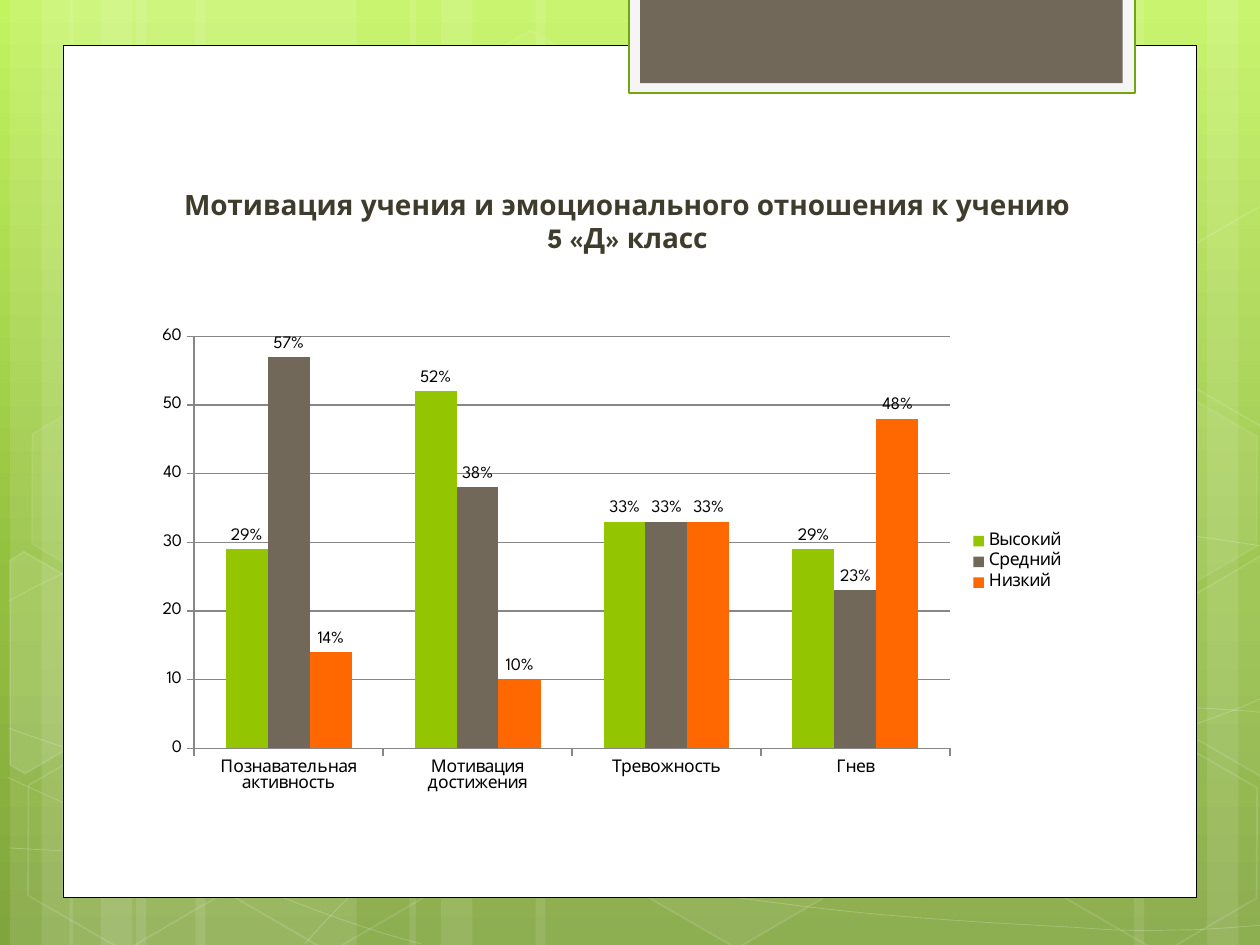
from copy import deepcopy

from lxml.etree import SubElement
from pptx import Presentation
from pptx.chart.data import CategoryChartData
from pptx.dml.color import RGBColor
from pptx.enum.chart import XL_CHART_TYPE as ChartType
from pptx.enum.chart import XL_LABEL_POSITION as LabelPosition
from pptx.enum.chart import XL_LEGEND_POSITION as LegendPosition
from pptx.enum.chart import XL_TICK_MARK as TickMark
from pptx.enum.shapes import MSO_SHAPE as Preset
from pptx.enum.text import MSO_ANCHOR as Anchor
from pptx.enum.text import MSO_AUTO_SIZE as AutoSize
from pptx.enum.text import PP_ALIGN as Align
from pptx.oxml.ns import qn
from pptx.util import Inches, Pt

FONT = "League Spartan"
WHITE = RGBColor(0xFF, 0xFF, 0xFF)
BLACK = RGBColor(0x00, 0x00, 0x00)
PALE = RGBColor(0xF5, 0xF5, 0xF5)
GREEN = RGBColor(0x94, 0xC6, 0x00)
DARK_GREEN = RGBColor(0x74, 0xA5, 0x10)
BROWN = RGBColor(0x71, 0x68, 0x5A)
ORANGE = RGBColor(0xFF, 0x67, 0x00)
TITLE_COLOR = RGBColor(0x3E, 0x3D, 0x2D)
GRID_COLOR = RGBColor(0x87, 0x87, 0x87)
BACKGROUND = [(0, RGBColor(0xC3, 0xF3, 0x5F)),
              (0.62, RGBColor(0x93, 0xBF, 0x3F)),
              (1, RGBColor(0x81, 0xA5, 0x3E))]

# Left edge and width of each full-height stripe
STRIPES = [(1.08, 1.75), (0.08, 0.5), (0.33, 0.83), (1.55, 1.75), (0.55, 0.5),
           (0.8, 0.83), (7.33, 1.75), (9.58, 0.5), (9, 0.83), (4.25, 3.08),
           (3.25, 0.5), (3.5, 0.83)]
# Each curve: start point, then Bezier segments of three points
CURVES = [
    [(0.07, 6.73), (0.61, 6.76), (1.15, 6.79), (1.9, 6.78), (2.65, 6.77),
     (3.58, 6.75), (4.58, 6.65), (5.58, 6.55), (7, 6.36), (7.92, 6.17),
     (8.83, 5.98), (9.77, 5.68), (10.07, 5.51)],
    [(0.07, 4.77), (0.36, 4.61), (0.65, 4.46), (1.21, 4.31), (1.78, 4.16),
     (2.59, 3.94), (3.47, 3.87), (4.36, 3.8), (5.44, 3.79), (6.54, 3.87),
     (7.64, 3.95), (9.47, 4.26), (10.07, 4.34)],
    [(0.06, 6.17), (1.27, 6.72), (2.47, 7.27), (3.34, 7.49)],
    [(0.07, 5.78), (0.38, 5.89), (0.7, 6), (1.28, 6.16), (1.86, 6.31),
     (2.73, 6.56), (3.57, 6.73), (4.4, 6.9), (5.45, 7.08), (6.28, 7.18),
     (7.11, 7.29), (8, 7.33), (8.53, 7.36), (9.05, 7.4), (9.19, 7.38),
     (9.45, 7.38), (9.71, 7.37), (9.89, 7.35), (10.07, 7.34)],
    [(2.42, 7.49), (2.6, 7.29), (2.78, 7.09), (3.02, 6.91), (3.26, 6.73),
     (3.6, 6.53), (3.88, 6.39), (4.16, 6.25), (4.33, 6.19), (4.7, 6.09),
     (5.06, 5.99), (5.73, 5.85), (6.08, 5.78), (6.44, 5.71), (6.49, 5.71),
     (6.8, 5.69), (7.11, 5.66), (7.6, 5.63), (7.94, 5.62), (8.29, 5.61),
     (8.86, 5.62), (8.86, 5.62), (9.08, 5.62), (9.31, 5.62), (9.53, 5.62),
     (9.71, 5.63), (9.88, 5.64), (9.97, 5.65), (10.06, 5.66), (10.03, 5.65),
     (10.06, 5.66)],
]
# Left, top, fill opacity and line opacity in percent
HEXAGONS = [(3.34, 0.36, 4, 8), (4.97, 5.89, 6, 12), (0.11, 5.91, 0, 12),
            (0.14, 3.12, 7, 8), (1.74, 5.92, 0, 12), (7.53, 4.53, 10, 12),
            (8.34, 5.93, 0, 12), (8.34, 3.14, 7, 8)]
# Hexagons cut off by the slide edge: points and fill opacity
CUT_HEXAGONS = [
    ([(0.08, 4.45), (0.19, 4.38), (0.96, 4.82), (0.95, 5.7), (0.2, 6.14),
      (0.08, 6.07)], 10),
    ([(9.26, 4.85), (10.01, 4.41), (10.09, 4.46), (10.09, 6.13),
      (10.02, 6.17), (9.26, 5.73)], 4),
    ([(9.26, 2.07), (10.01, 1.63), (10.1, 1.68), (10.09, 3.35),
      (10.02, 3.39), (9.26, 2.95)], 0),
]
CATEGORIES = ["Познавательная активность", "Мотивация достижения",
              "Тревожность", "Гнев"]
SERIES = [("Высокий", (29, 52, 33, 29), GREEN),
          ("Средний", (57, 38, 33, 23), BROWN),
          ("Низкий", (14, 10, 33, 48), ORANGE)]


def apply(target, values):
    for name, value in values.items():
        setattr(target, name, value)


def inch_box(*lengths):
    return [Inches(length) for length in lengths]


def style(shape, fill=None, line=None, width=1, fill_opacity=100,
          line_opacity=100):
    """Set fill and line; opacities are in percent."""
    shape.shadow.inherit = False
    for part, color, opacity in ((shape.fill, fill, fill_opacity),
                                 (shape.line.fill, line, line_opacity)):
        if color is None or opacity == 0:
            part.background()
            continue
        part.solid()
        part.fore_color.rgb = color
    if line is not None:
        shape.line.width = Pt(width)
    properties = shape.element.spPr
    for route, opacity in (("a:solidFill", fill_opacity),
                           ("a:ln/a:solidFill", line_opacity)):
        steps = "/".join(qn(step) for step in route.split("/"))
        color = properties.find(f"{steps}/{qn('a:srgbClr')}")
        if color is not None and opacity < 100:
            SubElement(color, qn("a:alpha"), val=str(opacity * 1000))


def add_outline(slide, points, close):
    start, *rest = [inch_box(*point) for point in points]
    builder = slide.shapes.build_freeform(*start)
    builder.add_line_segments(rest, close=close)
    return builder.convert_to_shape()


def add_curve(slide, controls):
    """Join each three line segments into one Bezier segment."""
    curve = add_outline(slide, controls, close=False)
    outline = curve.element.find(f".//{qn('a:pathLst')}")[0]
    lines = outline.findall(qn("a:lnTo"))
    for first in range(0, len(lines), 3):
        bezier = SubElement(outline, qn("a:cubicBezTo"))
        for line in lines[first:first + 3]:
            bezier.append(line[0])
            outline.remove(line)
    return curve


def add_background(slide, height):
    fill = slide.background.fill
    fill.gradient()
    fill.gradient_angle = 270
    stop_list = slide.element.find(f".//{qn('a:gsLst')}")
    stop_list.append(deepcopy(stop_list[0]))
    for stop, (position, color) in zip(fill.gradient_stops, BACKGROUND):
        stop.position = position
        stop.color.rgb = color

    for left, width in STRIPES:
        stripe = slide.shapes.add_shape(Preset.RECTANGLE,
                                        *inch_box(left, 0, width, height))
        style(stripe, WHITE, fill_opacity=10)
    for controls in CURVES:
        style(add_curve(slide, controls), line=WHITE, width=0.5,
              line_opacity=20)
    for left, top, fill_opacity, line_opacity in HEXAGONS:
        hexagon = slide.shapes.add_shape(Preset.HEXAGON,
                                         *inch_box(left, top, 1.75, 1.52))
        hexagon.adjustments[0] = 0.285
        hexagon.rotation = 30
        style(hexagon, WHITE, WHITE, 1, fill_opacity, line_opacity)
    for points, fill_opacity in CUT_HEXAGONS:
        hexagon = add_outline(slide, points, close=True)
        style(hexagon, WHITE, WHITE, 1, fill_opacity, 12)


def add_frame(slide, left, top, width, height):
    """White page with a tab hanging from the slide's top edge."""
    for box, fill, line, line_width in (
            ((left, top, width, height), WHITE, BLACK, 0.5),
            ((left + 4.49, -0.02, 4.02, 0.76), PALE, DARK_GREEN, 1.25),
            ((left + 4.58, -0.02, 3.83, 0.68), BROWN, None, 0)):
        shape = slide.shapes.add_shape(Preset.RECTANGLE, *inch_box(*box))
        style(shape, fill, line, line_width)


def place_title(slide, left, top, width, height):
    title = slide.shapes.title
    slide.shapes.element.append(title.element)
    box = inch_box(left, top, width, height)
    apply(title, dict(zip(("left", "top", "width", "height"), box)))
    frame = title.text_frame
    frame.text = ("Мотивация учения и эмоционального отношения к учению\v"
                  "5 «Д» класс")
    apply(frame, {"auto_size": AutoSize.NONE, "word_wrap": True,
                  "vertical_anchor": Anchor.BOTTOM,
                  "margin_bottom": Inches(0.35)})
    paragraph = frame.paragraphs[0]
    apply(paragraph, {"alignment": Align.CENTER, "line_spacing": 1.0})
    for run in paragraph.runs:
        apply(run.font, {"name": FONT, "size": Pt(16), "bold": True})
        run.font.color.rgb = TITLE_COLOR


def set_plot_layout(chart, **fractions):
    """Fix the inner plot area as fractions of the chart."""
    area = chart.element.find(f".//{qn('c:plotArea')}")
    layout = area.find(qn("c:layout"))
    if layout is None:
        layout = SubElement(area, qn("c:layout"))
        area.insert(0, layout)
    manual = SubElement(layout, qn("c:manualLayout"))
    settings = {"layoutTarget": "inner", "xMode": "edge", "yMode": "edge",
                **fractions}
    for name, value in settings.items():
        SubElement(manual, qn(f"c:{name}"), val=str(value))


def add_motivation_chart(slide, left, top, width, height):
    data = CategoryChartData()
    data.categories = CATEGORIES
    for name, values, _ in SERIES:
        data.add_series(name, values)
    chart = slide.shapes.add_chart(ChartType.COLUMN_CLUSTERED,
                                   *inch_box(left, top, width, height),
                                   data).chart
    apply(chart, {"has_title": False, "has_legend": True})
    apply(chart.font, {"name": FONT, "size": Pt(10)})
    chart.font.color.rgb = BLACK
    apply(chart.legend, {"position": LegendPosition.RIGHT,
                         "include_in_layout": False})

    plot = chart.plots[0]
    apply(plot, {"gap_width": 150, "overlap": 0, "vary_by_categories": False,
                 "has_data_labels": True})
    apply(plot.data_labels, {"show_value": True, "number_format": '0"%"',
                             "number_format_is_linked": False,
                             "position": LabelPosition.OUTSIDE_END})
    for series, (_, _, color) in zip(plot.series, SERIES):
        series.format.fill.solid()
        series.format.fill.fore_color.rgb = color

    value_axis = chart.value_axis
    apply(value_axis, {"minimum_scale": 0, "maximum_scale": 60,
                       "major_unit": 10, "has_major_gridlines": True})
    for axis in (chart.category_axis, value_axis):
        axis.major_tick_mark = TickMark.OUTSIDE
    for part in (chart.category_axis, value_axis, value_axis.major_gridlines):
        part.format.line.color.rgb = GRID_COLOR
        part.format.line.width = Pt(0.75)
    set_plot_layout(chart, x=0.4 / width, y=0.13 / height,
                    w=6 / width, h=3.27 / height)


def main():
    presentation = Presentation()
    apply(presentation, {"slide_width": Inches(10),
                         "slide_height": Inches(7.5)})
    slide = presentation.slides.add_slide(presentation.slide_layouts[5])
    add_background(slide, 7.5)
    add_frame(slide, 0.5, 0.36, 9, 6.76)
    place_title(slide, 1.14, 1.12, 7.68, 1.25)
    add_motivation_chart(slide, 1.14, 2.54, 7.41, 3.84)
    presentation.save("out.pptx")


if __name__ == "__main__":
    main()
